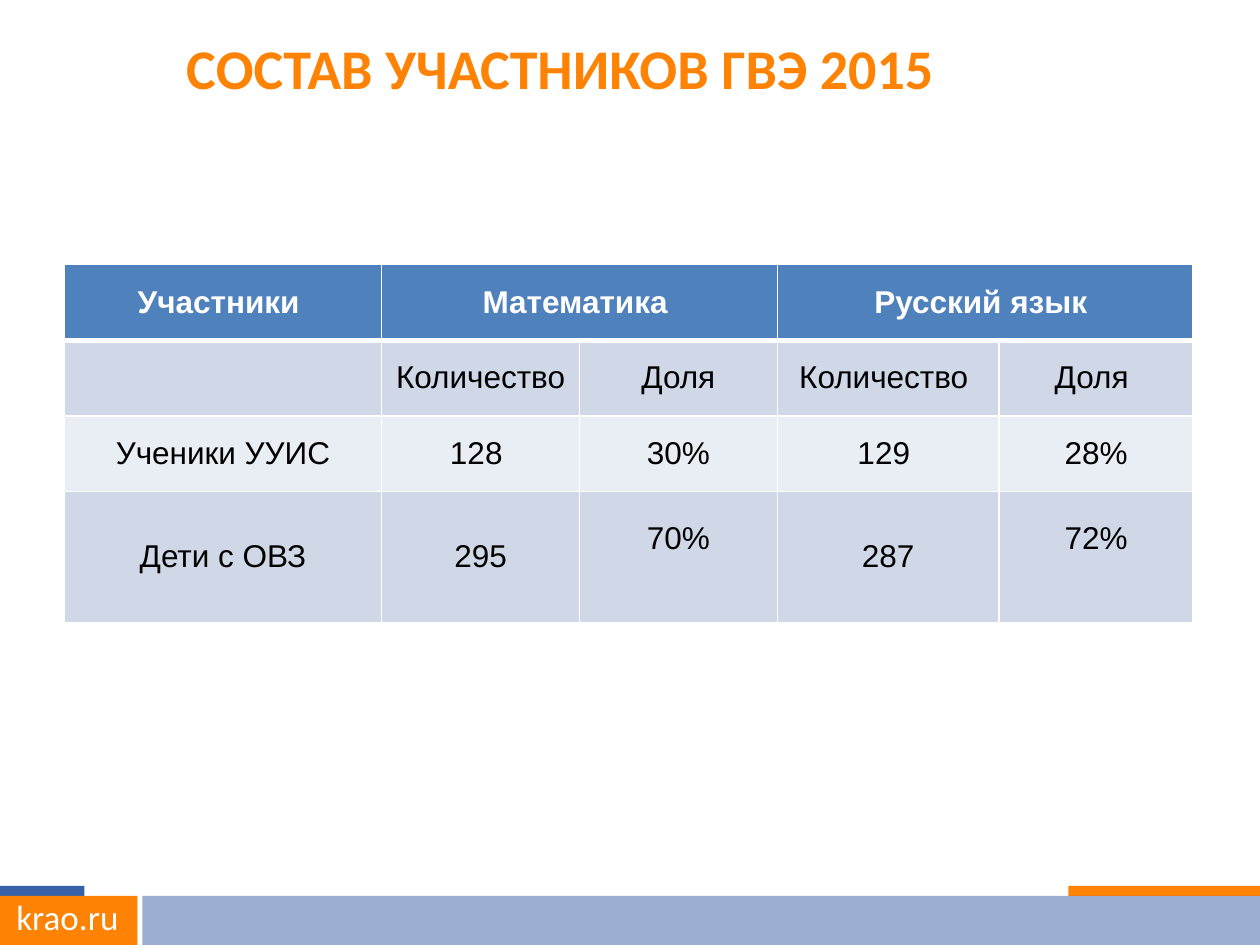
"""Build the slide on the make-up of the 2015 exam participants."""
import lxml.etree
import pptx
import pptx.dml.color
import pptx.enum.shapes
import pptx.enum.text
import pptx.oxml.ns
import pptx.util

Inches = pptx.util.Inches
Align = pptx.enum.text.PP_ALIGN
Anchor = pptx.enum.text.MSO_ANCHOR
qn = pptx.oxml.ns.qn

THEME = {
    "orange": "FE8304", "blue": "3661A6", "white": "FFFFFF", "black": "000000",
    "head": "4F81BD", "dark": "D0D8E8", "light": "E9EDF4",
    "title": {"name": "Calibri", "size": 32, "bold": True},
    "site": {"name": "Calibri", "size": 20, "bold": False},
    "top": {"name": "Arial", "size": 18, "bold": True},
    "body": {"name": "Arial", "size": 18, "bold": False},
}

TITLE = "СОСТАВ УЧАСТНИКОВ ГВЭ 2015"
SITE = "krao.ru"
ROWS = [
    ["Участники ", "Математика ", "", "Русский язык ", ""],
    ["", "Количество ", "Доля", "Количество ", "Доля "],
    ["Ученики УУИС", "128 ", "30%", "129 ", "28%"],
    ["Дети с ОВЗ", "295", "70%", "287", "72%"],
]
WIDTHS = [2.52, 1.57, 1.57, 1.76, 1.54]
HEIGHTS = [0.6, 0.6, 0.6, 1.04]
SPANS = [(1, 2), (3, 4)]
RAISED = [(3, 2), (3, 4)]
BARS = [
    ((0, 7.03, 0.67, 0.08), "blue", 100),
    ((8.48, 7.03, 1.52, 0.08), "orange", 100),
    ((0, 7.11, 1.09, 0.39), "orange", 100),
    ((1.13, 7.11, 8.87, 0.39), "blue", 50),
]


def tint(name):
    return pptx.dml.color.RGBColor.from_string(THEME[name])


def paint(fill, name):
    fill.solid()
    fill.fore_color.rgb = tint(name)


def write(frame, text, style, color, align):
    line = frame.paragraphs[0]
    line.alignment = align
    run = line.add_run()
    run.text = text
    form = dict(THEME[style], size=pptx.util.Pt(THEME[style]["size"]))
    for key, value in form.items():
        setattr(run.font, key, value)
    run.font.color.rgb = tint(color)


def add_bar(slide, box, name, alpha):
    kind = pptx.enum.shapes.MSO_SHAPE.RECTANGLE
    bar = slide.shapes.add_shape(kind, *map(Inches, box))
    bar.shadow.inherit = False
    bar.line.fill.background()
    paint(bar.fill, name)
    if alpha < 100:
        color = bar.element.spPr.find(".//" + qn("a:srgbClr"))
        lxml.etree.SubElement(color, qn("a:alpha"), val=str(alpha * 1000))


def add_text(slide, box, text, style, color, align, anchor):
    frame = slide.shapes.add_textbox(*map(Inches, box)).text_frame
    frame.word_wrap = True
    frame.vertical_anchor = anchor
    write(frame, text, style, color, align)


def edge(cell, row):
    props = cell._tc.get_or_add_tcPr()
    sides = {"L": 1, "R": 1, "T": 3 if row == 1 else 1, "B": 3 if row == 0 else 1}
    for side, width in sides.items():
        line = lxml.etree.SubElement(props, qn("a:ln" + side), w=str(pptx.util.Pt(width)))
        fill = lxml.etree.SubElement(line, qn("a:solidFill"))
        lxml.etree.SubElement(fill, qn("a:srgbClr"), val=THEME["white"])


def add_grid(slide):
    box = (0.51, 2.1, sum(WIDTHS), sum(HEIGHTS))
    grid = slide.shapes.add_table(len(ROWS), len(WIDTHS), *map(Inches, box)).table
    for col, width in zip(grid.columns, WIDTHS):
        col.width = Inches(width)
    for row, height in zip(grid.rows, HEIGHTS):
        row.height = Inches(height)
    for first, last in SPANS:
        grid.cell(0, first).merge(grid.cell(0, last))
    for r, texts in enumerate(ROWS):
        back = "head" if r == 0 else "dark" if r % 2 else "light"
        style, color = ("top", "white") if r == 0 else ("body", "black")
        for c, text in enumerate(texts):
            cell = grid.cell(r, c)
            edge(cell, r)
            paint(cell.fill, back)
            cell.vertical_anchor = Anchor.MIDDLE
            if (r, c) in RAISED:
                cell.margin_bottom = Inches(0.34)
            if text:
                write(cell.text_frame, text, style, color, Align.CENTER)


def main():
    deck = pptx.Presentation()
    deck.slide_width, deck.slide_height = Inches(10), Inches(7.5)
    slide = deck.slides.add_slide(deck.slide_layouts[6])
    for bar in BARS:
        add_bar(slide, *bar)
    add_text(slide, (0, 7.06, 1.07, 0.44), SITE, "site", "white", Align.CENTER, Anchor.TOP)
    add_grid(slide)
    add_text(slide, (1.38, 0.06, 7.97, 0.94), TITLE, "title", "orange", Align.LEFT, Anchor.MIDDLE)
    deck.save("out.pptx")


if __name__ == "__main__":
    main()
